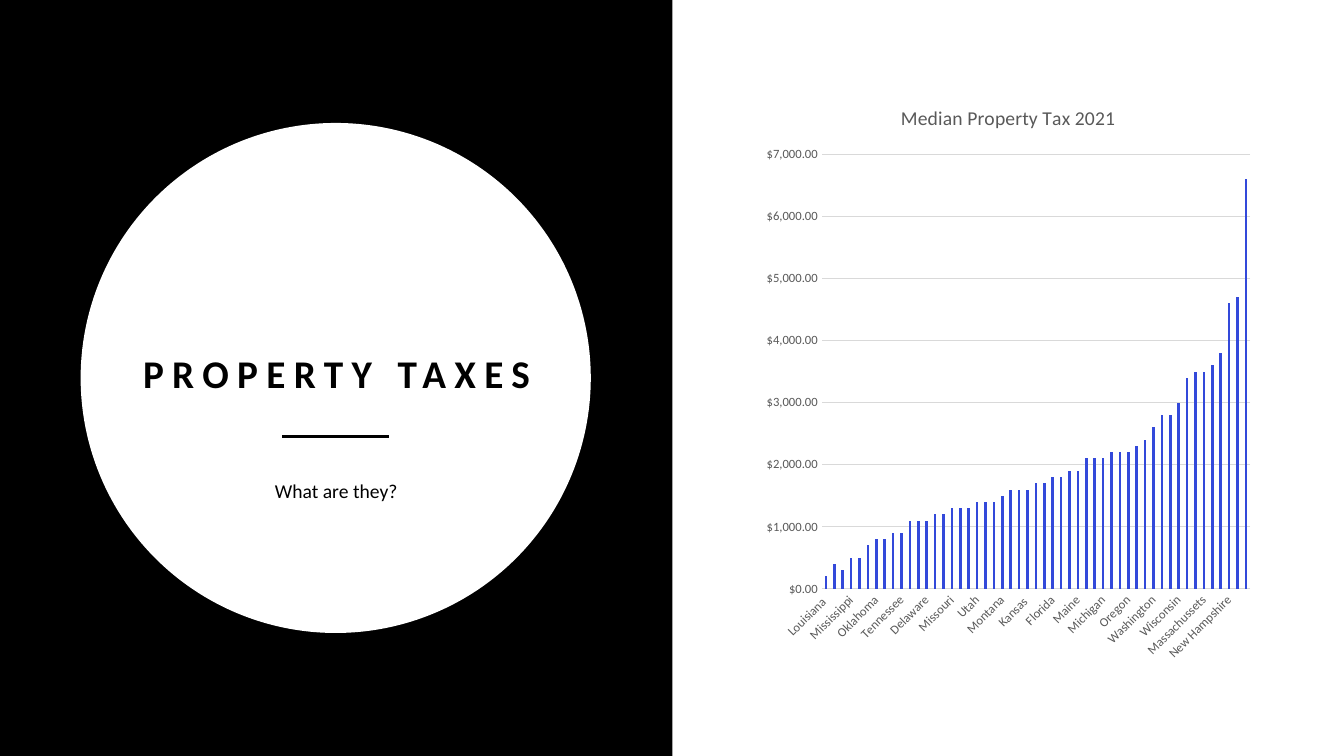
from dataclasses import dataclass
from lxml.etree import SubElement
from pptx import Presentation
from pptx.chart.data import CategoryChartData
from pptx.dml.color import RGBColor
from pptx.enum.chart import XL_CHART_TYPE, XL_TICK_MARK
from pptx.enum.shapes import MSO_CONNECTOR, MSO_SHAPE
from pptx.enum.text import MSO_ANCHOR, MSO_AUTO_SIZE, PP_ALIGN
from pptx.oxml import parse_xml
from pptx.oxml.ns import nsdecls, qn
from pptx.util import Inches, Pt

TITLE = "PROPERTY TAXES"
QUESTION = "What are they?"
HEADING = "Median Property Tax 2021"
TAXES = [
    ("Louisiana ", 200), ("Alabama ", 400), ("West Virginia", 300),
    ("Mississippi", 500), ("Arkansas", 500), ("South Carolina", 700),
    ("Oklahoma", 800), ("Kentucky ", 800), ("New Mexico", 900),
    ("Tennessee", 900), ("Indiana", 1100), ("Wyoming", 1100),
    ("Delaware", 1100), ("Idaho ", 1200), ("North Carolina", 1200),
    ("Missouri", 1300), ("Hawaii", 1300), ("Georgia", 1300),
    ("Utah", 1400), ("Arizona", 1400), ("Colorado ", 1400),
    ("Montana", 1500), ("Iowa", 1600), ("South Dakota", 1600),
    ("Kansas ", 1600), ("North Dakota", 1700), ("Nevada", 1700),
    ("Florida", 1800), ("Ohio", 1800), ("Virginia", 1900),
    ("Maine", 1900), ("District of Colombia", 2100), ("Minnesota", 2100),
    ("Michigan", 2100), ("Nebraska", 2200), ("Pennsylvania", 2200),
    ("Oregon", 2200), ("Texas", 2300), ("Alaska", 2400),
    ("Washington", 2600), ("Maryland", 2800), ("California", 2800),
    ("Wisconsin", 3000), ("Vermont", 3400), ("Illinois", 3500),
    ("Massachussets", 3500), ("Rhode Island", 3600), ("New York", 3800),
    ("New Hampshire", 4600), ("Connecticut", 4700), ("New Jersey", 6600),
]


@dataclass(frozen=True)
class Theme:
    font: str = "Calibri"
    black: RGBColor = RGBColor(0, 0, 0)
    white: RGBColor = RGBColor(255, 255, 255)
    gray: RGBColor = RGBColor.from_string("595959")
    rule: RGBColor = RGBColor.from_string("D9D9D9")
    bar: RGBColor = RGBColor.from_string("3349DA")
    title: int = 28
    body: int = 14
    label: int = 9


THEME = Theme()


def style(font, size, color, bold=False):
    font.name, font.size, font.bold = THEME.font, Pt(size), bold
    font.color.rgb = color


def write(frame, text, size, color=THEME.black, bold=False, line=None,
          before=None, gap=0):
    """Fill a text frame with one centred line; gap is letter spacing in points."""
    para = frame.paragraphs[0]
    para.alignment = PP_ALIGN.CENTER
    para.line_spacing = line
    if before is not None:
        para.space_before = Pt(before)
    run = para.add_run()
    run.text = text
    style(run.font, size, color, bold)
    if gap:
        run.font._element.set("spc", str(gap * 100))


def place(holder, box, anchor):
    holder.left, holder.top, holder.width, holder.height = map(Inches, box)
    frame = holder.text_frame
    frame.word_wrap = True
    frame.auto_size = MSO_AUTO_SIZE.NONE
    frame.vertical_anchor = anchor
    return frame


def panel(slide, kind, box, color, depth):
    """Add a plain shape behind the text; depth 0 is the farthest back."""
    shape = slide.shapes.add_shape(kind, *map(Inches, box))
    shape.shadow.inherit = False
    shape.fill.solid()
    shape.fill.fore_color.rgb = color
    shape.line.fill.background()
    slide.shapes._spTree.insert(2 + depth, shape._element)


def divide(slide, left, right, top):
    line = slide.shapes.add_connector(
        MSO_CONNECTOR.STRAIGHT, *map(Inches, (left, top, right, top)))
    line.line.color.rgb = THEME.black
    line.line.width = Pt(2.5)
    SubElement(line._element.spPr, qn("a:effectLst"))


def fix_plot(chart, **parts):
    """Pin the inner plot area, in fractions of the chart."""
    tags = "".join(f'<c:{k}Mode val="edge"/>' for k in "xy")
    tags += "".join(f'<c:{k} val="{v}"/>' for k, v in parts.items())
    area = chart._chartSpace.chart.plotArea
    for old in area.findall(qn("c:layout")):
        area.remove(old)
    area.insert(0, parse_xml(
        f'<c:layout {nsdecls("c")}><c:manualLayout>'
        f'<c:layoutTarget val="inner"/>{tags}</c:manualLayout></c:layout>'))


def add_bars(slide, box):
    data = CategoryChartData(number_format='"$"#,##0.00')
    data.categories = [state for state, _ in TAXES]
    data.add_series("Series 1", [tax for _, tax in TAXES])
    chart = slide.shapes.add_chart(
        XL_CHART_TYPE.COLUMN_CLUSTERED, *map(Inches, box), data).chart
    style(chart.font, 10, THEME.black)
    chart.has_legend = False
    chart.has_title = True
    write(chart.chart_title.text_frame, HEADING, THEME.body, THEME.gray)
    chart.chart_title.include_in_layout = False

    plot = chart.plots[0]
    plot.gap_width, plot.overlap = 219, -27
    plot.vary_by_categories = False
    fill = plot.series[0].format.fill
    fill.solid()
    fill.fore_color.rgb = THEME.bar

    states, taxes = chart.category_axis, chart.value_axis
    for axis in (states, taxes):
        axis.major_tick_mark = axis.minor_tick_mark = XL_TICK_MARK.NONE
        style(axis.tick_labels.font, THEME.label, THEME.gray)
    states._element.txPr.bodyPr.set("rot", "-2700000")
    taxes.format.line.fill.background()
    taxes.minimum_scale, taxes.maximum_scale = 0, 7000
    taxes.major_unit = 1000
    taxes.tick_labels.number_format = '"$"#,##0.00'
    taxes.tick_labels.number_format_is_linked = False
    taxes.has_major_gridlines = True
    for line in (states.format.line, taxes.major_gridlines.format.line):
        line.color.rgb = THEME.rule
        line.width = Pt(0.75)
    fix_plot(chart, x=0.13, y=0.12, w=0.85, h=0.74)


def main():
    deck = Presentation()
    deck.slide_width, deck.slide_height = Inches(13.33), Inches(7.5)
    slide = deck.slides.add_slide(deck.slide_layouts[2])
    title, body = slide.placeholders
    panel(slide, MSO_SHAPE.RECTANGLE, (0, 0, 6.67, 7.5), THEME.black, 0)
    panel(slide, MSO_SHAPE.OVAL, (0.8, 1.22, 5.06, 5.06), THEME.white, 1)
    write(place(title, (1.19, 2.5, 4.3, 1.48), MSO_ANCHOR.BOTTOM),
          TITLE, THEME.title, bold=True, line=1.2, gap=6)
    write(place(body, (1.67, 4.65, 3.33, 0.96), MSO_ANCHOR.TOP),
          QUESTION, THEME.body, line=1.2, before=10)
    divide(slide, 2.8, 3.86, 4.33)
    add_bars(slide, (7.5, 0.83, 5, 5.83))
    deck.save("out.pptx")


if __name__ == "__main__":
    main()
